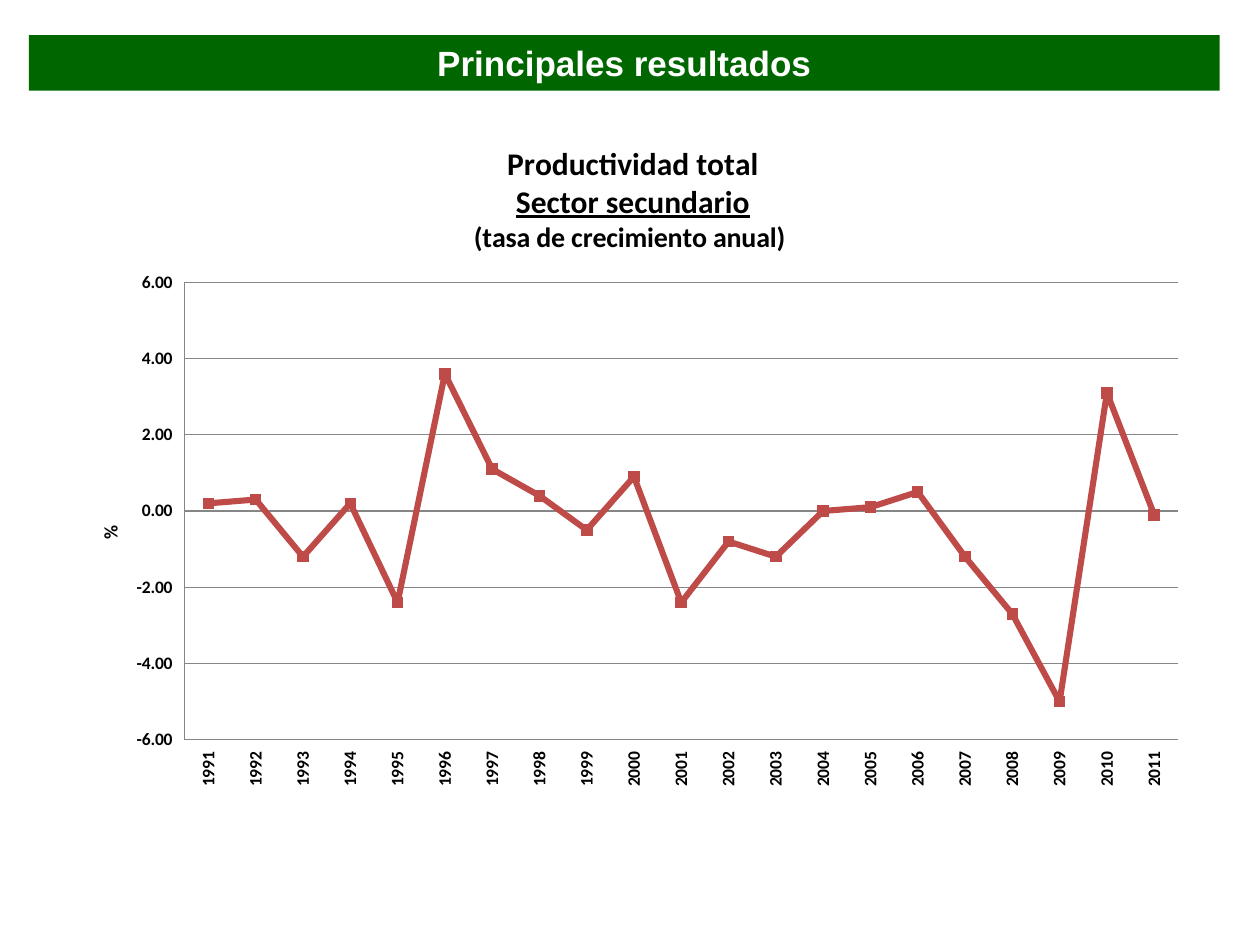
from lxml import etree
from pptx import Presentation
from pptx.chart.data import CategoryChartData
from pptx.dml.color import RGBColor
from pptx.enum import chart as charts, shapes, text
from pptx.oxml.ns import qn
from pptx.util import Inches, Pt

GREEN = RGBColor(0x00, 0x66, 0x00)
WHITE = RGBColor(0xFF, 0xFF, 0xFF)
BLACK = RGBColor(0x00, 0x00, 0x00)
RED = RGBColor(0xBE, 0x4B, 0x48)
GRAY = RGBColor(0x86, 0x86, 0x86)

YEARS = [str(year) for year in range(1991, 2012)]
GROWTH = [0.2, 0.3, -1.2, 0.2, -2.4, 3.6, 1.1, 0.4, -0.5, 0.9, -2.4,
          -0.8, -1.2, 0, 0.1, 0.5, -1.2, -2.7, -5, 3.1, -0.1]
TITLE_LINES = [
    ("Productividad total", {"size": Pt(18)}),
    ("Sector secundario", {"size": Pt(18), "underline": True}),
    ("(tasa de crecimiento anual) ", {"size": Pt(16)}),
]


def apply_format(font, color, **values):
    font.color.rgb = color
    for name, value in values.items():
        setattr(font, name, value)


def place(element, **fractions):
    """Give a chart part a manual layout in fractions of the chart area."""
    layout = element.find(qn("c:layout"))
    if layout is None:
        layout = etree.Element(qn("c:layout"))
        text_part = element.find(qn("c:tx"))
        element.insert(0 if text_part is None else 1, layout)
    for child in list(layout):
        layout.remove(child)
    manual = etree.SubElement(layout, qn("c:manualLayout"))
    settings = {"xMode": "edge", "yMode": "edge", **fractions}
    if "w" in fractions:
        settings = {"layoutTarget": "inner", **settings}
    for name, value in settings.items():
        etree.SubElement(manual, qn(f"c:{name}")).set("val", str(value))


class SlideBuilder:
    font_name = "Calibri"
    banner_font = "Arial"

    def __init__(self, page):
        self.page = page

    def banner(self, words, left, top, width, height):
        box = self.page.shapes.add_shape(
            shapes.MSO_SHAPE.RECTANGLE,
            Inches(left), Inches(top), Inches(width), Inches(height))
        box.shadow.inherit = False
        box.fill.solid()
        box.fill.fore_color.rgb = GREEN
        box.line.fill.background()
        box.text_frame.word_wrap = True
        box.text_frame.vertical_anchor = text.MSO_ANCHOR.MIDDLE
        para = box.text_frame.paragraphs[0]
        para.alignment = text.PP_ALIGN.CENTER
        span = para.add_run()
        span.text = words
        apply_format(span.font, WHITE, name=self.banner_font,
                     size=Pt(20), bold=True)

    def title(self, owner, lines, **fractions):
        """Write a title on a chart or an axis, one paragraph a line."""
        owner.has_title = True
        title = owner.chart_title if hasattr(owner, "chart_title") else owner.axis_title
        frame = title.text_frame
        for index, (words, values) in enumerate(lines):
            para = frame.add_paragraph() if index else frame.paragraphs[0]
            span = para.add_run()
            span.text = words
            apply_format(span.font, BLACK, name=self.font_name, bold=True, **values)
        place(title._element, **fractions)
        return frame

    def axis(self, axis):
        axis.major_tick_mark = axis.minor_tick_mark = charts.XL_TICK_MARK.NONE
        axis.tick_label_position = charts.XL_TICK_LABEL_POSITION.LOW
        axis.format.line.color.rgb = GRAY
        apply_format(axis.tick_labels.font, BLACK, name=self.font_name,
                     size=Pt(10), bold=True)

    def line_chart(self, categories, values, left, top, width, height):
        data = CategoryChartData(number_format="0.00")
        data.categories = categories
        data.add_series("Series 1", values)
        chart = self.page.shapes.add_chart(
            charts.XL_CHART_TYPE.LINE_MARKERS,
            Inches(left), Inches(top), Inches(width), Inches(height), data).chart
        chart.has_legend = False
        apply_format(chart.font, BLACK, name=self.font_name, size=Pt(10))
        self.title(chart, TITLE_LINES, x=0.36, y=0.03)

        years, rates = chart.category_axis, chart.value_axis
        for axis in (years, rates):
            self.axis(axis)
        years.tick_labels.font._element.getparent().getparent().getparent().find(
            qn("a:bodyPr")).set("rot", "-5400000")
        rates.minimum_scale, rates.maximum_scale, rates.major_unit = -6, 6, 2
        rates.tick_labels.number_format = "0.00"
        rates.tick_labels.number_format_is_linked = False
        rates.major_gridlines.format.line.color.rgb = GRAY
        frame = self.title(rates, [("%", {"size": Pt(11)})], x=0.03, y=0.59)
        frame._txBody.find(qn("a:bodyPr")).set("rot", "-5400000")

        chart.plots[0].vary_by_categories = False
        place(chart.plots[0]._element.getparent(), x=0.11, y=0.24, w=0.87, h=0.67)
        series = chart.plots[0].series[0]
        series.smooth = False
        series.format.line.color.rgb = RED
        series.format.line.width = Pt(3.5)
        marker = series.marker
        marker.style = charts.XL_MARKER_STYLE.SQUARE
        marker.size = 6
        marker.format.fill.solid()
        marker.format.fill.fore_color.rgb = RED
        marker.format.line.color.rgb = RED


def main():
    deck = Presentation()
    deck.slide_width, deck.slide_height = Inches(10), Inches(7.5)
    builder = SlideBuilder(deck.slides.add_slide(deck.slide_layouts[6]))
    builder.line_chart(YEARS, GROWTH, 0.47, 0.94, 9.06, 5.42)
    builder.banner("Principales resultados", 0.23, 0.28, 9.45, 0.44)
    deck.save("out.pptx")


if __name__ == "__main__":
    main()
